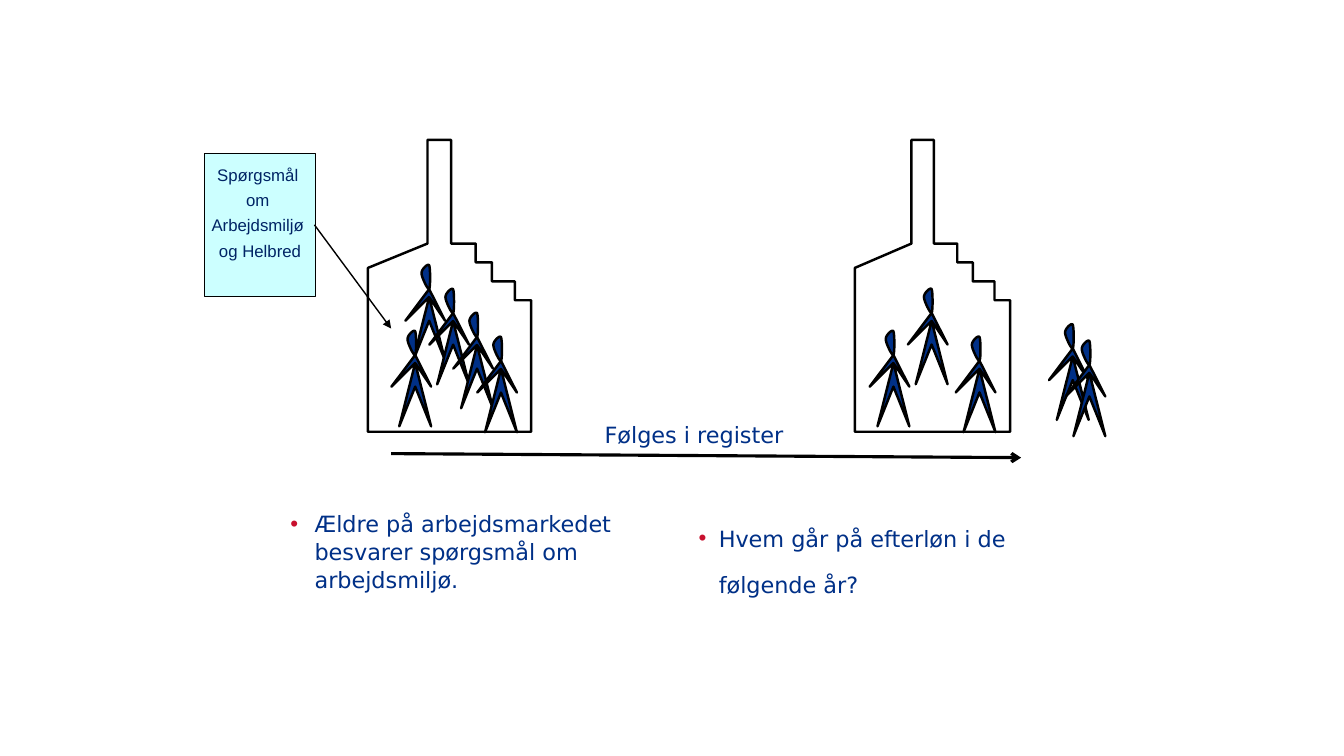
from lxml import etree
from pptx import Presentation
from pptx.dml.color import RGBColor
from pptx.enum.shapes import MSO_CONNECTOR, MSO_SHAPE
from pptx.enum.text import MSO_ANCHOR, MSO_AUTO_SIZE, PP_ALIGN
from pptx.oxml.ns import qn
from pptx.util import Pt

RECT = MSO_SHAPE.RECTANGLE
LINE = MSO_CONNECTOR.STRAIGHT
TOP, MIDDLE = MSO_ANCHOR.TOP, MSO_ANCHOR.MIDDLE
CENTER, LEFT = PP_ALIGN.CENTER, PP_ALIGN.LEFT
NO_FIT = MSO_AUTO_SIZE.NONE
GROW = MSO_AUTO_SIZE.SHAPE_TO_FIT_TEXT

BLACK, BLUE, NAVY, RED, AQUA = "000000", "003087", "002465", "C8102E", "CCFFFF"
SANS = {"name": "DejaVu Sans", "size": Pt(16)}
ARIAL = {"name": "Arial", "size": Pt(12)}
BARE = {"margin_left": 0, "margin_top": 0, "margin_right": 0, "margin_bottom": 0}

# Outlines in points, measured from the neck of a person
BODY = [(0, 0), (-17, 22.6), (0, 5.7), (-11.4, 51), (0, 22.6),
        (11.4, 51), (0, 5.7), (11.4, 22.6)]
HEAD = [[(0, -17), (0.9, -15), (0.9, -0.9), (0, 0)],
        [(0, 0), (-0.9, 0.9), (-5.5, -8.5), (-5.5, -11.4)],
        [(-5.5, -11.4), (-5.5, -14.2), (-0.9, -18.6), (0, -17)]]
# Factory walls: share of the width, height in points from the chimney top
WALLS = [(0, 91.4), (0, 208.4), (1, 208.4), (1, 114.5), (0.9, 114.5),
         (0.9, 101), (0.76, 101), (0.76, 87.4), (0.66, 87.4), (0.66, 74),
         (0.51, 74), (0.51, 0), (0.365, 0), (0.365, 74)]


def color(value):
    return RGBColor.from_string(value)


def apply(target, values):
    for name, value in values.items():
        setattr(target, name, value)


def curve(knots, steps=8):
    """Points along a cubic Bezier curve, without its last point."""
    points = []
    for i in range(steps):
        t = i / steps
        parts = ((1 - t) ** 3, 3 * t * (1 - t) ** 2, 3 * t * t * (1 - t), t ** 3)
        points.append(tuple(sum(p * k[axis] for p, k in zip(parts, knots))
                            for axis in (0, 1)))
    return points


def paint(shape, fill, width):
    shape.shadow.inherit = False
    if fill:
        shape.fill.solid()
        shape.fill.fore_color.rgb = color(fill)
    else:
        shape.fill.background()
    shape.line.color.rgb = color(BLACK)
    shape.line.width = Pt(width)


def outline(slide, points, fill=None):
    points = [(Pt(x), Pt(y)) for x, y in points]
    form = slide.shapes.build_freeform(*points[0])
    form.add_line_segments(points[1:], close=True)
    paint(form.convert_to_shape(), fill, 1.75)


def person(slide, x, y):
    head = [point for knots in HEAD for point in curve(knots)]
    for part in (BODY, head):
        outline(slide, [(x + dx, y + dy) for dx, dy in part], BLUE)


def factory(slide, left, width):
    outline(slide, [(left + share * width, 100 + dy) for share, dy in WALLS])


def arrow(slide, start, end, width, tip):
    link = slide.shapes.add_connector(LINE, *map(Pt, start + end))
    link.line.color.rgb = color(BLACK)
    link.line.width = Pt(width)
    props = link._element.spPr
    etree.SubElement(props.find(qn("a:ln")), qn("a:tailEnd"), type=tip)
    etree.SubElement(props, qn("a:effectLst"))


def write(par, text, font, tint, layout):
    run = par.add_run()
    run.text = text
    apply(run.font, font)
    run.font.color.rgb = color(tint)
    apply(par, layout)


def bullet(par, indent):
    props = par._p.get_or_add_pPr()
    props.set("marL", str(Pt(indent)))
    props.set("indent", str(-Pt(indent)))
    tint = etree.SubElement(props, qn("a:buClr"))
    etree.SubElement(tint, qn("a:srgbClr"), val=RED)
    etree.SubElement(props, qn("a:buChar"), char="•")


def listing(holder, place, text, indent, layout):
    apply(holder, dict(zip(("left", "top", "width", "height"), map(Pt, place))))
    frame = holder.text_frame
    apply(frame, {**BARE, "word_wrap": True, "auto_size": NO_FIT,
                  "vertical_anchor": TOP})
    par = frame.paragraphs[0]
    bullet(par, indent)
    write(par, text, SANS, BLUE, {"alignment": LEFT, "space_before": 0, **layout})
    return par


def note(slide, place, lines):
    box = slide.shapes.add_shape(RECT, *map(Pt, place))
    paint(box, AQUA, 1)
    frame = box.text_frame
    apply(frame, {**BARE, "margin_bottom": Pt(18), "word_wrap": False,
                  "vertical_anchor": MIDDLE})
    for i, text in enumerate(lines):
        par = frame.add_paragraph() if i else frame.paragraphs[0]
        write(par, text, ARIAL, NAVY, {"alignment": CENTER, "line_spacing": 1.04,
                                       "space_after": Pt(3)})


def label(slide, place, text):
    frame = slide.shapes.add_textbox(*map(Pt, place)).text_frame
    apply(frame, {"word_wrap": True, "auto_size": GROW})
    write(frame.paragraphs[0], text, SANS, BLUE,
          {"line_spacing": 1.04, "space_after": Pt(3)})


def main():
    deck = Presentation()
    apply(deck, {"slide_width": Pt(960), "slide_height": Pt(540)})
    slide = deck.slides.add_slide(deck.slide_layouts[3])
    title = slide.shapes.title._element
    title.getparent().remove(title)

    # Bullet lists
    listing(slide.placeholders[1], (207.4, 363.6, 255.6, 110.9),
            "Ældre på arbejdsmarkedet besvarer spørgsmål om arbejdsmiljø.",
            17.3, {"line_spacing": 1.04, "space_after": Pt(3)})
    ask = listing(slide.placeholders[2], (499, 366.5, 275.8, 108),
                  "Hvem går på efterløn i de følgende år?",
                  14.4, {"line_spacing": 1.43})
    write(ask, " ", {**SANS, "size": Pt(20)}, BLUE, {})

    # Workers at the start, with the survey
    for i in range(4):
        person(slide, 306.6 + 17.1 * i, 206.5 + 17.1 * i)
    note(slide, (146, 109.5, 79.5, 102.2),
         ["Spørgsmål ", "om ", "Arbejdsmiljø ", "og Helbred"])
    arrow(slide, (224.6, 160.6), (279.4, 234.7), 1, "triangle")
    person(slide, 296.6, 253.6)
    factory(slide, 262.8, 116.6)

    # Follow-up: those who stay and those who leave
    arrow(slide, (279.4, 324), (729.4, 326.9), 2.25, "arrow")
    for x, y in ((766.3, 248.9), (665.5, 223.5), (699.7, 257.7), (638.2, 253.6)):
        person(slide, x, y)
    factory(slide, 610.6, 110.9)
    person(slide, 778.2, 260.6)
    label(slide, (424.8, 296.6, 145.4, 27.4), "Følges i register")

    deck.save("out.pptx")


if __name__ == "__main__":
    main()
